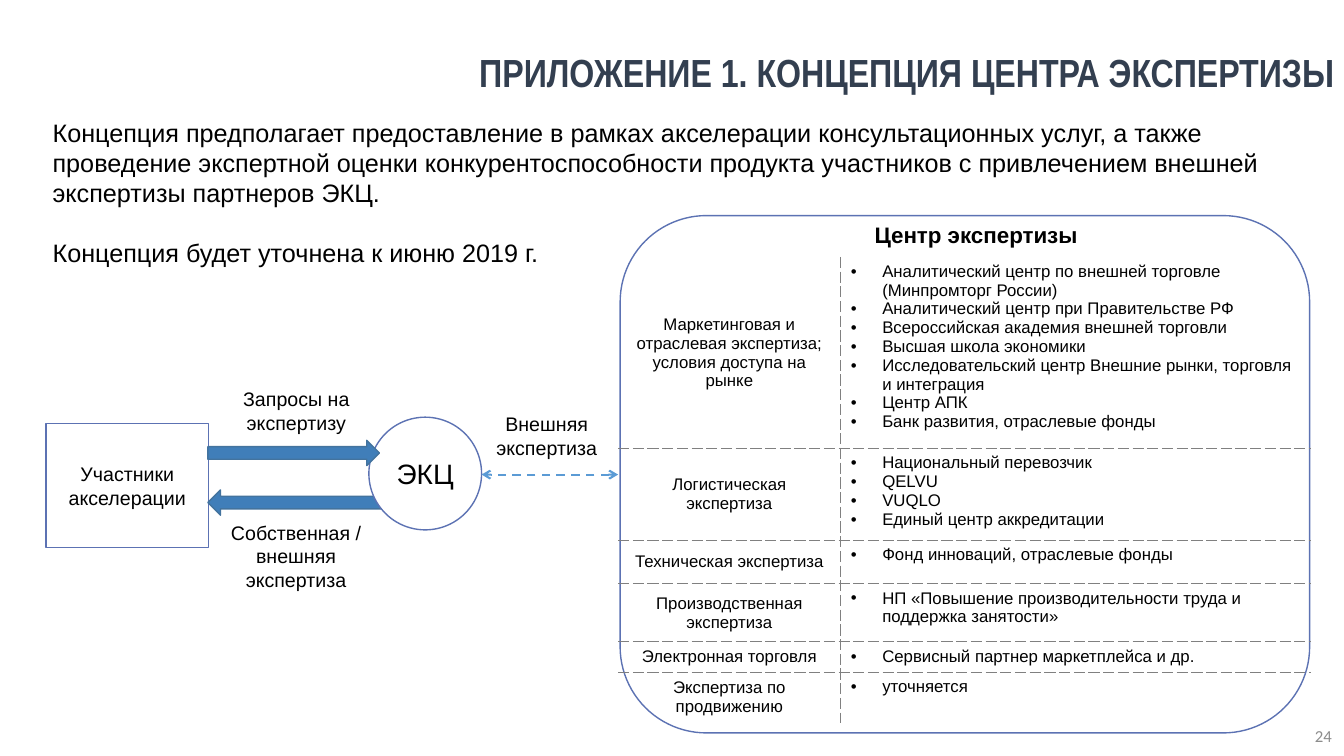
"""Build the expertise centre concept slide."""
from lxml import etree
from pptx import Presentation
from pptx.dml.color import RGBColor
from pptx.enum.dml import MSO_LINE
from pptx.enum.shapes import MSO_CONNECTOR, MSO_SHAPE
from pptx.enum.text import MSO_ANCHOR, PP_ALIGN
from pptx.oxml.ns import qn
from pptx.util import Pt

LEFT, CENTER, RIGHT = PP_ALIGN.LEFT, PP_ALIGN.CENTER, PP_ALIGN.RIGHT
TOP, MIDDLE = MSO_ANCHOR.TOP, MSO_ANCHOR.MIDDLE
RECTANGLE, ROUNDED, OVAL = MSO_SHAPE.RECTANGLE, MSO_SHAPE.ROUNDED_RECTANGLE, MSO_SHAPE.OVAL
LEFT_ARROW, RIGHT_ARROW = MSO_SHAPE.LEFT_ARROW, MSO_SHAPE.RIGHT_ARROW
STRAIGHT, DASH = MSO_CONNECTOR.STRAIGHT, MSO_LINE.DASH

BLACK = RGBColor(0x00, 0x00, 0x00)
WHITE = RGBColor(0xFF, 0xFF, 0xFF)
NAVY = RGBColor(0x33, 0x3F, 0x50)
GRAY = RGBColor(0x8C, 0x8C, 0x8C)
RULE_GRAY = RGBColor(0x80, 0x80, 0x80)
OUTLINE = RGBColor(0x5C, 0x72, 0xB3)
ARROW_FILL = RGBColor(0x40, 0x7E, 0xB9)
ARROW_LINE = RGBColor(0x43, 0x73, 0x9E)
LINK_BLUE = RGBColor(0x5B, 0x9B, 0xD5)
NO_TABLE_STYLE = "{2D5ABB26-0587-4C30-8999-92F81FD0307C}"


def write(frame, *lines, size=14, font="Arial", color=BLACK, bold=False,
          align=CENTER, anchor=TOP, spacing=None, gap=0, bullet=False):
    """Fill a text frame with one paragraph per line."""
    frame.word_wrap = True
    frame.vertical_anchor = anchor
    for index, line in enumerate(lines):
        para = frame.paragraphs[0] if index == 0 else frame.add_paragraph()
        if bullet:
            props = para._p.get_or_add_pPr()
            props.set("marL", str(Pt(22.5)))
            props.set("indent", str(-Pt(22.5)))
            etree.SubElement(props, qn("a:buFont")).set("typeface", "Arial")
            etree.SubElement(props, qn("a:buChar")).set("char", "•")
        para.alignment = align
        if spacing:
            para.line_spacing = spacing
        if index and gap:
            para.space_before = Pt(gap)
        span = para.add_run()
        span.text = line
        span.font.size = Pt(size)
        span.font.name = font
        span.font.bold = bold
        span.font.color.rgb = color


def draw(kind, left, top, width, height, fill=WHITE, line=OUTLINE):
    """Add a preset shape with a thin outline."""
    shape = page.shapes.add_shape(kind, Pt(left), Pt(top), Pt(width), Pt(height))
    shape.shadow.inherit = False
    shape.fill.solid()
    shape.fill.fore_color.rgb = fill
    shape.line.color.rgb = line
    shape.line.width = Pt(1)
    return shape


deck = Presentation()
deck.slide_width, deck.slide_height = Pt(960), Pt(540)
page = deck.slides.add_slide(deck.slide_layouts[6])

draw(ROUNDED, 443, 154, 492.5, 369.5)
participants = draw(RECTANGLE, 33, 302.5, 116, 88.5)
write(participants.text_frame, "Участники акселерации", anchor=MIDDLE)
draw(LEFT_ARROW, 148.5, 350, 134, 18, ARROW_FILL, ARROW_LINE)
hub = draw(OVAL, 263.5, 298, 80.5, 80.5)
write(hub.text_frame, "ЭКЦ", size=20, anchor=MIDDLE)
draw(RIGHT_ARROW, 148.5, 314.5, 122.5, 18, ARROW_FILL, ARROW_LINE)

link = page.shapes.add_connector(STRAIGHT, Pt(441.5), Pt(339), Pt(344), Pt(339))
link.line.color.rgb = LINK_BLUE
link.line.width = Pt(1.5)
link.line.dash_style = DASH
link_line = link.line._get_or_add_ln()
for end in ("a:headEnd", "a:tailEnd"):
    etree.SubElement(link_line, qn(end)).set("type", "arrow")
etree.SubElement(link._element.spPr, qn("a:effectLst"))

texts = [
    ((253, 33.5, 707, 39.5), ["ПРИЛОЖЕНИЕ 1. КОНЦЕПЦИЯ ЦЕНТРА ЭКСПЕРТИЗЫ"],
     dict(size=28, font="Arial Narrow", color=NAVY, bold=True, align=RIGHT,
          anchor=MIDDLE, spacing=0.9)),
    ((742.5, 511, 216, 29), ["24"],
     dict(size=12, font="Calibri", color=GRAY, align=RIGHT, anchor=MIDDLE)),
    ((30.5, 80, 890, 116.5),
     ["Концепция предполагает предоставление в рамках акселерации консультационных "
      "услуг, а также проведение экспертной оценки конкурентоспособности продукта "
      "участников с привлечением внешней экспертизы партнеров ЭКЦ.",
      "Концепция будет уточнена к июню 2019 г."],
     dict(size=18, align=LEFT, gap=21)),
    ((153.5, 273, 116.5, 41), ["Запросы на экспертизу"], {}),
    ((335.5, 291, 110, 41), ["Внешняя экспертиза"], {}),
    ((140.5, 368.5, 142, 58.5), ["Собственная / внешняя экспертиза"], {}),
    ((613, 154.5, 168.5, 26.5), ["Центр экспертизы"], dict(size=16, bold=True)),
]
for place, lines, style in texts:
    box = page.shapes.add_textbox(*map(Pt, place))
    write(box.text_frame, *lines, **style)

rows = [
    (137, ["Маркетинговая и", "отраслевая экспертиза;", "условия доступа на рынке"],
     ["Аналитический центр по внешней торговле (Минпромторг России)",
      "Аналитический центр при Правительстве РФ",
      "Всероссийская академия внешней торговли",
      "Высшая школа экономики",
      "Исследовательский центр Внешние рынки, торговля и интеграция",
      "Центр АПК",
      "Банк развития, отраслевые фонды"]),
    (65.5, ["Логистическая экспертиза"],
     ["Национальный перевозчик", "QELVU", "VUQLO", "Единый центр аккредитации"]),
    (31, ["Техническая экспертиза"], ["Фонд инноваций, отраслевые фонды"]),
    (41.5, ["Производственная экспертиза"],
     ["НП «Повышение производительности труда и поддержка занятости»"]),
    (21, ["Электронная торговля"], ["Сервисный партнер маркетплейса и др."]),
    (36, ["Экспертиза по продвижению"], ["уточняется"]),
]
frame = page.shapes.add_table(len(rows), 2, Pt(441.5), Pt(183.5), Pt(495), Pt(332))
table = frame.table
table.first_row = table.horz_banding = False
table._tbl.tblPr.find(qn("a:tableStyleId")).text = NO_TABLE_STYLE
table.columns[0].width, table.columns[1].width = Pt(159), Pt(336)
for row, (height, topic, partners) in enumerate(rows):
    table.rows[row].height = Pt(height)
    write(table.cell(row, 0).text_frame, *topic, size=12)
    write(table.cell(row, 1).text_frame, *partners, size=12, align=LEFT, bullet=True)
    table.cell(row, 0).vertical_anchor = MIDDLE
    for column in range(2):
        cell = table.cell(row, column)
        props = cell._tc.get_or_add_tcPr()
        borders = {"a:lnL": column == 1, "a:lnR": column == 0,
                   "a:lnT": row > 0, "a:lnB": row < len(rows) - 1}
        for side, visible in borders.items():
            if visible:
                rule = etree.SubElement(props, qn(side), w=str(Pt(1)))
                fill = etree.SubElement(rule, qn("a:solidFill"))
                etree.SubElement(fill, qn("a:srgbClr"), val=str(RULE_GRAY))
                etree.SubElement(rule, qn("a:prstDash"), val="sysDash")
        cell.fill.background()

deck.save("out.pptx")
